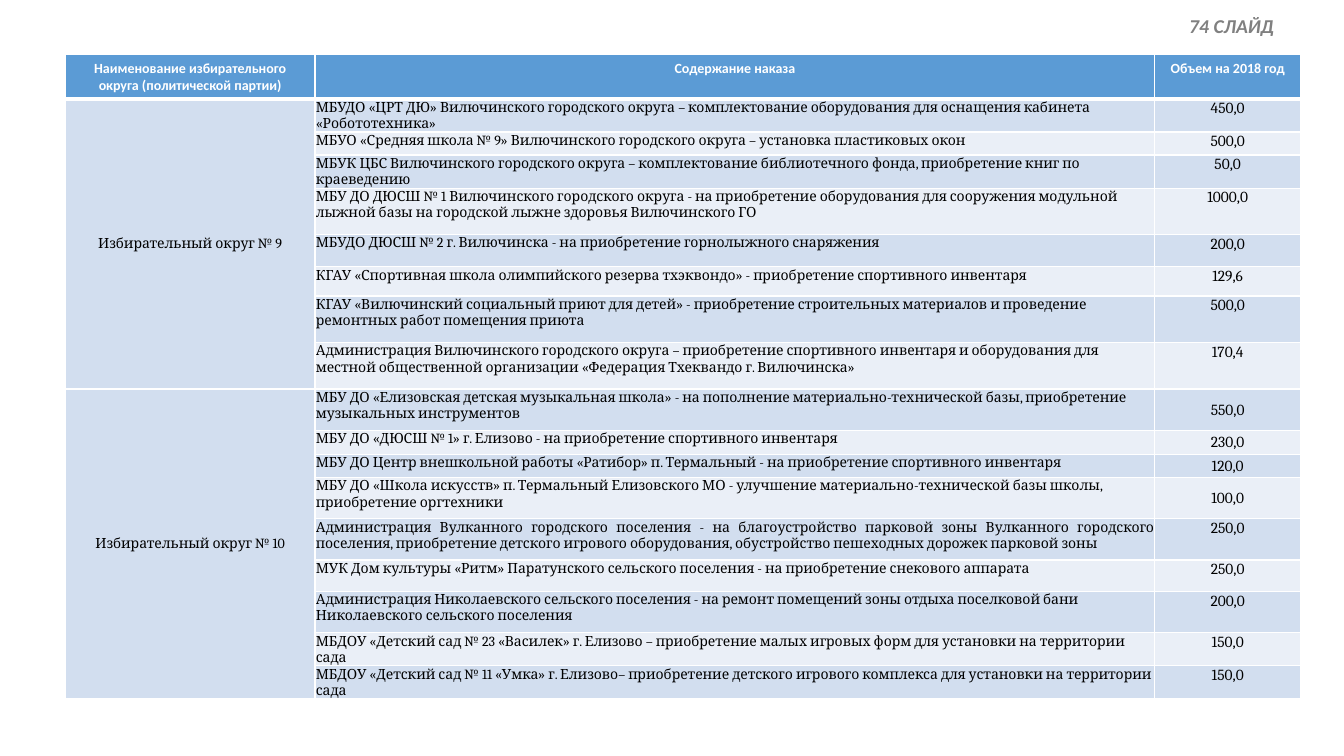
"""Builds the slide with voter mandates by electoral district."""
import pptx
import pptx.dml.color
import pptx.enum.text
import pptx.oxml
import pptx.oxml.ns
import pptx.util
from pptx.util import Cm

WHITE = pptx.dml.color.RGBColor(0xFF, 0xFF, 0xFF)
BLACK = pptx.dml.color.RGBColor(0x00, 0x00, 0x00)
GREY = pptx.dml.color.RGBColor(0x80, 0x80, 0x80)
HEADER_BLUE = pptx.dml.color.RGBColor(0x5B, 0x9B, 0xD5)
BAND_DARK = pptx.dml.color.RGBColor(0xD2, 0xDE, 0xEF)
BAND_LIGHT = pptx.dml.color.RGBColor(0xEA, 0xEF, 0xF7)

LEFT = pptx.enum.text.PP_ALIGN.LEFT
CENTER = pptx.enum.text.PP_ALIGN.CENTER
JUSTIFY = pptx.enum.text.PP_ALIGN.JUSTIFY
TOP = pptx.enum.text.MSO_ANCHOR.TOP
MIDDLE = pptx.enum.text.MSO_ANCHOR.MIDDLE

COLUMN_WIDTHS = (6.3, 21.16, 3.68)
HEADER_HEIGHT = 1.04
HEADINGS = ("Наименование избирательного округа (политической партии)",
            "Содержание наказа", "Объем на 2018 год")

DISTRICTS = {
    "Избирательный округ № 9": [
        (0.71, "МБУДО «ЦРТ ДЮ» Вилючинского городского округа – комплектование оборудования для оснащения кабинета «Робототехника»", "450,0", LEFT, TOP),
        (0.58, "МБУО «Средняя школа № 9» Вилючинского городского округа – установка пластиковых окон", "500,0", LEFT, TOP),
        (0.66, "МБУК ЦБС Вилючинского городского округа – комплектование библиотечного фонда, приобретение книг по краеведению", "50,0", LEFT, TOP),
        (1.17, "МБУ ДО ДЮСШ № 1 Вилючинского городского округа - на приобретение оборудования для сооружения модульной лыжной базы на городской лыжне здоровья Вилючинского ГО", "1000,0", LEFT, TOP),
        (0.81, "МБУДО ДЮСШ № 2 г. Вилючинска - на приобретение горнолыжного снаряжения", "200,0", LEFT, TOP),
        (0.74, "КГАУ «Спортивная школа олимпийского резерва тхэквондо» - приобретение спортивного инвентаря", "129,6", LEFT, TOP),
        (1.17, "КГАУ «Вилючинский социальный приют для детей» - приобретение строительных материалов и проведение ремонтных работ помещения приюта", "500,0", LEFT, TOP),
        (1.17, "Администрация Вилючинского городского округа – приобретение спортивного инвентаря и оборудования для местной общественной организации «Федерация Тхеквандо г. Вилючинска»", "170,4", LEFT, TOP),
    ],
    "Избирательный округ № 10": [
        (1.04, "МБУ ДО «Елизовская детская музыкальная школа» - на пополнение материально-технической базы, приобретение музыкальных инструментов", "550,0", LEFT, MIDDLE),
        (0.61, "МБУ ДО «ДЮСШ № 1» г. Елизово - на приобретение спортивного инвентаря", "230,0", LEFT, MIDDLE),
        (0.58, "МБУ ДО Центр внешкольной работы «Ратибор» п. Термальный - на приобретение спортивного инвентаря", "120,0", LEFT, MIDDLE),
        (1.04, "МБУ ДО «Школа искусств» п. Термальный Елизовского МО - улучшение материально-технической базы школы, приобретение оргтехники", "100,0", LEFT, MIDDLE),
        (1.04, "Администрация Вулканного городского поселения - на благоустройство парковой зоны Вулканного городского поселения, приобретение детского игрового оборудования, обустройство пешеходных дорожек парковой зоны", "250,0", JUSTIFY, TOP),
        (0.79, "МУК Дом культуры «Ритм» Паратунского сельского поселения - на приобретение снекового аппарата", "250,0", JUSTIFY, TOP),
        (1.04, "Администрация Николаевского сельского поселения - на ремонт помещений зоны отдыха поселковой бани Николаевского сельского поселения", "200,0", LEFT, TOP),
        (0.81, "МБДОУ «Детский сад № 23 «Василек» г. Елизово – приобретение малых игровых форм для установки на территории сада", "150,0", LEFT, TOP),
        (0.81, "МБДОУ «Детский сад № 11 «Умка» г. Елизово– приобретение детского игрового комплекса для установки на территории сада", "150,0", LEFT, TOP),
    ],
}


class MandateSlide:
    """Holds the text style and the slide being filled."""

    heading_font = "Calibri"
    body_font = "Cambria"

    def __init__(self, slide):
        """Keep the slide to draw on."""
        self.slide = slide

    def style_text(self, paragraph, text, font, size, color, bold=False, italic=False):
        """Set a paragraph's text and format its run."""
        paragraph.text = text
        run_font = paragraph.runs[0].font
        run_font.name, run_font.size = font, pptx.util.Pt(size)
        run_font.bold, run_font.italic = bold, italic
        run_font.color.rgb = color

    def label(self, left, top, width, height, text):
        """Add the slide label."""
        frame = self.slide.shapes.add_textbox(
            Cm(left), Cm(top), Cm(width), Cm(height)).text_frame
        frame.word_wrap = False
        self.style_text(frame.paragraphs[0], text, self.heading_font, 14, GREY, True, True)

    def table(self, left, top, widths, heights):
        """Add an empty table with the given column widths and row heights."""
        table = self.slide.shapes.add_table(
            len(heights), len(widths), Cm(left), Cm(top),
            Cm(sum(widths)), Cm(sum(heights))).table
        for column, width in zip(table.columns, widths):
            column.width = Cm(width)
        for row, height in zip(table.rows, heights):
            row.height = Cm(height)
        return table

    def decorate(self, cell, fill, top_width=1, bottom_width=1):
        """Fill a cell and draw its white borders."""
        cell.fill.solid()
        cell.fill.fore_color.rgb = fill
        properties = cell._tc.get_or_add_tcPr()
        borders = (("lnL", 1), ("lnR", 1), ("lnT", top_width), ("lnB", bottom_width))
        for position, (side, points) in enumerate(borders):
            properties.insert(position, pptx.oxml.parse_xml(
                f'<a:{side} {pptx.oxml.ns.nsdecls("a")} w="{pptx.util.Pt(points)}">'
                f'<a:solidFill><a:srgbClr val="{WHITE}"/></a:solidFill></a:{side}>'))

    def heading(self, cell, text):
        """Fill in a column heading."""
        self.style_text(cell.text_frame.paragraphs[0], text, self.heading_font, 10, WHITE, True)
        cell.text_frame.paragraphs[0].alignment = CENTER

    def entry(self, cell, text, size, align, anchor, tight=True):
        """Fill in a body cell."""
        self.style_text(cell.text_frame.paragraphs[0], text, self.body_font, size, BLACK)
        cell.text_frame.paragraphs[0].alignment = align
        cell.vertical_anchor = anchor
        if tight:
            cell.margin_left = cell.margin_right = cell.margin_top = Cm(0.02)
            cell.margin_bottom = 0


def main():
    """Build and save the presentation."""
    presentation = pptx.Presentation()
    presentation.slide_width, presentation.slide_height = Cm(33.87), Cm(19.05)
    page = MandateSlide(presentation.slides.add_slide(presentation.slide_layouts[6]))

    mandates = [mandate for group in DISTRICTS.values() for mandate in group]
    heights = [HEADER_HEIGHT] + [mandate[0] for mandate in mandates]
    table = page.table(1.64, 1.38, COLUMN_WIDTHS, heights)

    for column, text in enumerate(HEADINGS):
        page.decorate(table.cell(0, column), HEADER_BLUE, bottom_width=3)
        page.heading(table.cell(0, column), text)

    for row, (_, content, amount, align, anchor) in enumerate(mandates, 1):
        band = BAND_DARK if row % 2 else BAND_LIGHT
        for column, fill in enumerate((BAND_DARK, band, band)):
            page.decorate(table.cell(row, column), fill, top_width=3 if row == 1 else 1)
        page.entry(table.cell(row, 1), content, 10, align, TOP)
        page.entry(table.cell(row, 2), amount, 11, CENTER, anchor)

    first_row = 1
    for district, group in DISTRICTS.items():
        district_cell = table.cell(first_row, 0)
        district_cell.merge(table.cell(first_row + len(group) - 1, 0))
        page.entry(district_cell, district, 10, CENTER, MIDDLE, tight=False)
        first_row += len(group)

    page.label(29.72, 0.23, 2.77, 0.86, "74 СЛАЙД")
    presentation.save("out.pptx")


if __name__ == "__main__":
    main()
